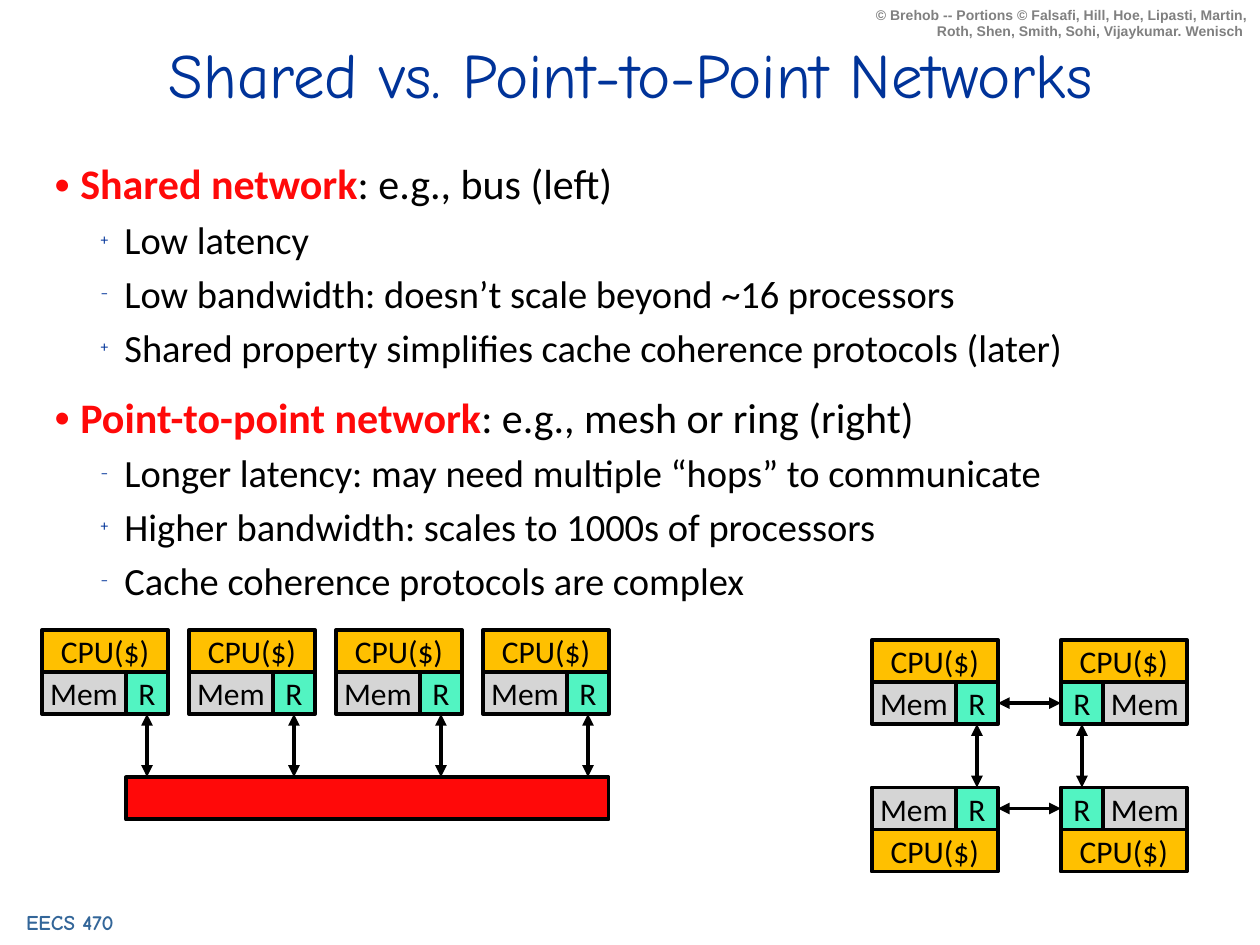
"""Build the slide comparing shared and point-to-point networks."""
import pptx
import pptx.dml.color
import pptx.enum.shapes
import pptx.enum.text
import pptx.oxml
import pptx.oxml.ns
import pptx.util
from pptx.util import Inches

COLORS = {
    "title": "003399", "course": "336699", "credit": "808080", "text": "000000",
    "red": "FF0909", "cpu": "FFC000", "memory": "D5D5D5", "router": "52F4C2",
}
UNIT = 1 / 3
ALIGN = pptx.enum.text.PP_ALIGN
ANCHOR = pptx.enum.text.MSO_ANCHOR
TOPICS = [
    ("Shared network", ": e.g., bus (left)", [
        ("+", "Low latency"),
        ("–", "Low bandwidth: doesn’t scale beyond ~16 processors"),
        ("+", "Shared property simplifies cache coherence protocols (later)"),
    ]),
    ("Point-to-point network", ": e.g., mesh or ring (right)", [
        ("–", "Longer latency: may need multiple “hops” to communicate"),
        ("+", "Higher bandwidth: scales to 1000s of processors"),
        ("–", "Cache coherence protocols are complex"),
    ]),
]


def rgb(name):
    return pptx.dml.color.RGBColor.from_string(COLORS[name])


def add_xml(parent, tag, **attributes):
    element = pptx.oxml.parse_xml(f"<a:{tag} {pptx.oxml.ns.nsdecls('a')}/>")
    for key, value in attributes.items():
        element.set(key, str(value))
    parent.append(element)
    return element


def format_run(run, size, color, font="Calibri", bold=False):
    run.font.size = pptx.util.Pt(size)
    run.font.name = font
    run.font.bold = bold
    run.font.color.rgb = rgb(color)


def add_text(slide, box, text, size, color, font, align, bold=False, anchor=ANCHOR.TOP):
    shape = slide.shapes.add_textbox(*map(Inches, box))
    frame = shape.text_frame
    frame.word_wrap = True
    frame.vertical_anchor = anchor
    frame.text = text
    paragraph = frame.paragraphs[0]
    paragraph.alignment = align
    format_run(paragraph.runs[0], size, color, font, bold)
    return paragraph


def add_bullet(paragraph, mark, level):
    indent, hanging, before, percent, color = [
        (0.21, 0.21, 15, 80, "red"), (0.56, 0.19, 7, 40, "title")][level]
    paragraph.level = level
    paragraph.line_spacing = 0.9
    paragraph.space_before = pptx.util.Pt(before)
    properties = paragraph._p.get_or_add_pPr()
    properties.set("marL", str(Inches(indent)))
    properties.set("indent", str(-Inches(hanging)))
    add_xml(add_xml(properties, "buClr"), "srgbClr", val=COLORS[color])
    add_xml(properties, "buSzPct", val=percent * 1000)
    add_xml(properties, "buFont", typeface="Calibri")
    add_xml(properties, "buChar", char=mark)


def add_topics(slide):
    frame = slide.shapes.add_textbox(*map(Inches, (0.33, 1.25, 9.33, 3.67))).text_frame
    frame.word_wrap = True
    for index, (term, example, points) in enumerate(TOPICS):
        paragraph = frame.add_paragraph() if index else frame.paragraphs[0]
        paragraph.text = term
        paragraph.add_run().text = example
        format_run(paragraph.runs[0], 24, "red", bold=True)
        format_run(paragraph.runs[1], 24, "text")
        add_bullet(paragraph, "•", 0)
        for mark, point in points:
            paragraph = frame.add_paragraph()
            paragraph.text = point
            format_run(paragraph.runs[0], 22, "text")
            add_bullet(paragraph, mark, 1)


def add_box(slide, left, top, width, color, label=""):
    shape = slide.shapes.add_shape(
        pptx.enum.shapes.MSO_SHAPE.RECTANGLE,
        *map(Inches, (left, top, width, UNIT)))
    shape.shadow.inherit = False
    shape.fill.solid()
    shape.fill.fore_color.rgb = rgb(color)
    shape.line.color.rgb = rgb("text")
    shape.line.width = pptx.util.Pt(2.25)
    if label:
        frame = shape.text_frame
        frame.word_wrap = False
        frame.vertical_anchor = ANCHOR.MIDDLE
        frame.text = label
        frame.paragraphs[0].alignment = ALIGN.CENTER
        format_run(frame.paragraphs[0].runs[0], 18, "text")
    return shape


def add_node(slide, left, top, mirrored=False, flipped=False):
    cpu_top, router_top = (top + UNIT, top) if flipped else (top, top + UNIT)
    memory_left, router_left = (left + UNIT, left) if mirrored else (left, left + 2 * UNIT)
    add_box(slide, left, cpu_top, 1, "cpu", "CPU($)")
    add_box(slide, memory_left, router_top, 2 * UNIT, "memory", "Mem")
    return add_box(slide, router_left, router_top, UNIT, "router", "R")


def add_link(slide, start, start_site, end=None, end_site=None, length=0.5):
    x, y = start.left + start.width // 2, start.top + start.height
    link = slide.shapes.add_connector(
        pptx.enum.shapes.MSO_CONNECTOR.STRAIGHT, x, y, x, y + Inches(length))
    link.begin_connect(start, start_site)
    if end is not None:
        link.end_connect(end, end_site)
    link.line.color.rgb = rgb("text")
    link.line.width = pptx.util.Pt(2.25)
    line = link.line._get_or_add_ln()
    add_xml(line, "headEnd", type="triangle")
    add_xml(line, "tailEnd", type="triangle")
    add_xml(link._element.spPr, "effectLst")


def add_bus_network(slide):
    for index in range(4):
        router = add_node(slide, UNIT + index * 3.5 * UNIT, 5)
        add_link(slide, router, 2)
    add_box(slide, 1, 6.17, 3.83, "red")


def add_mesh_network(slide):
    left, right, top, bottom = 6.92, 8.42, 5.08, 6.25
    top_left = add_node(slide, left, top)
    top_right = add_node(slide, right, top, mirrored=True)
    bottom_left = add_node(slide, left, bottom, flipped=True)
    bottom_right = add_node(slide, right, bottom, mirrored=True, flipped=True)
    add_link(slide, top_left, 2, bottom_left, 0)
    add_link(slide, top_right, 2, bottom_right, 0)
    add_link(slide, top_left, 3, top_right, 1)
    add_link(slide, bottom_left, 3, bottom_right, 1)


def main():
    presentation = pptx.Presentation()
    presentation.slide_width = Inches(10)
    presentation.slide_height = Inches(7.5)
    slide = presentation.slides.add_slide(presentation.slide_layouts[6])
    course = add_text(slide, (-0.08, 7.17, 1.33, 0.3), "EECS 470 ", 12, "course",
                      "Comic Neue", ALIGN.CENTER, bold=True)
    course.space_before = pptx.util.Pt(6)
    add_text(slide, (6.83, 0, 3.17, 0.37),
             "© Brehob -- Portions © Falsafi, Hill, Hoe, Lipasti, Martin, "
             "Roth, Shen, Smith, Sohi, Vijaykumar. Wenisch ",
             8, "credit", "Arial", ALIGN.RIGHT, bold=True)
    add_text(slide, (0.38, 0.25, 9.25, 0.67), "Shared vs. Point-to-Point Networks",
             36, "title", "Comic Neue", ALIGN.CENTER, anchor=ANCHOR.MIDDLE)
    add_topics(slide)
    add_bus_network(slide)
    add_mesh_network(slide)
    presentation.save("out.pptx")


if __name__ == "__main__":
    main()
